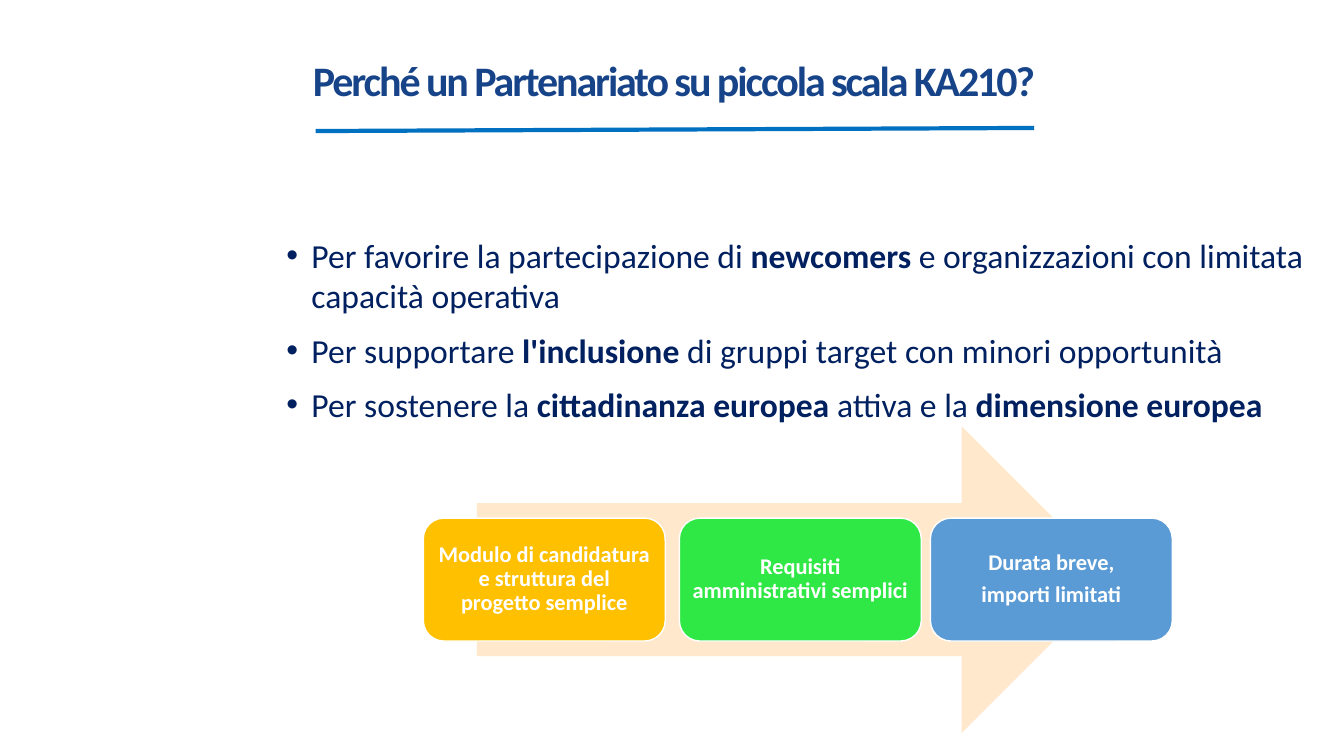
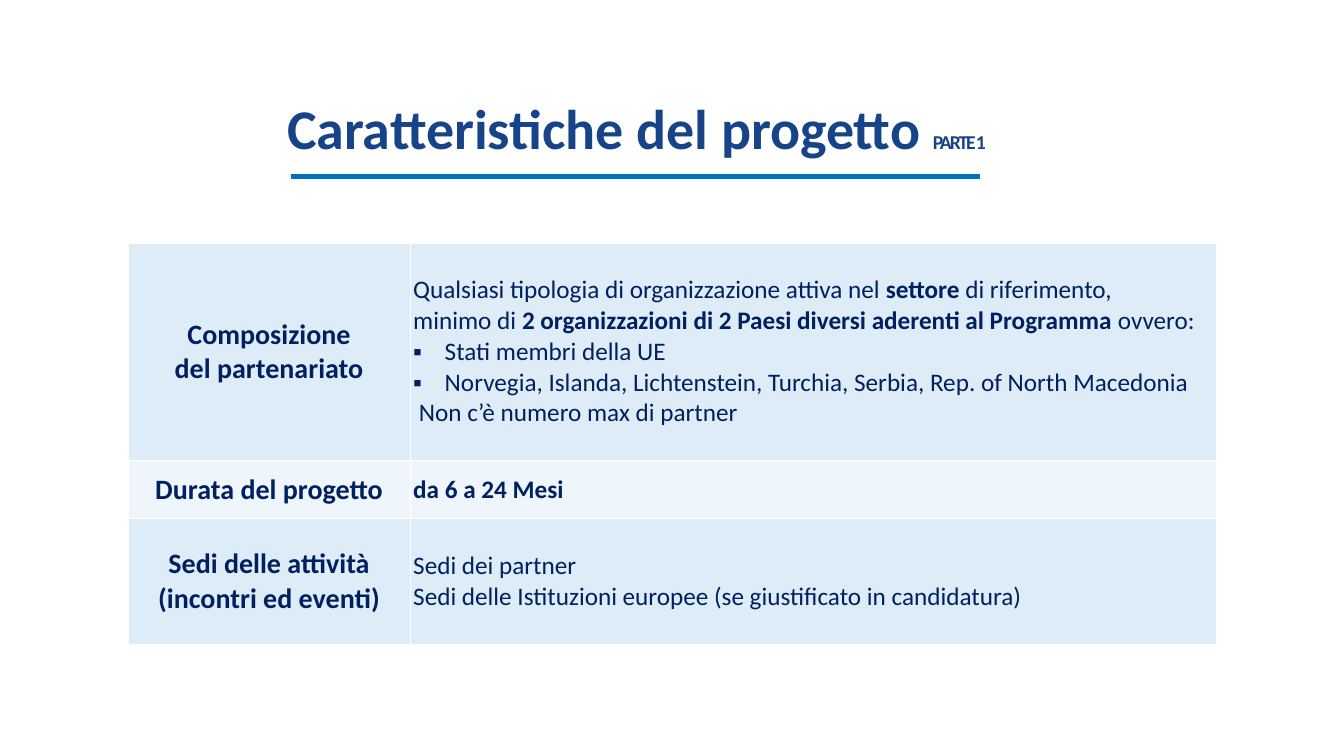
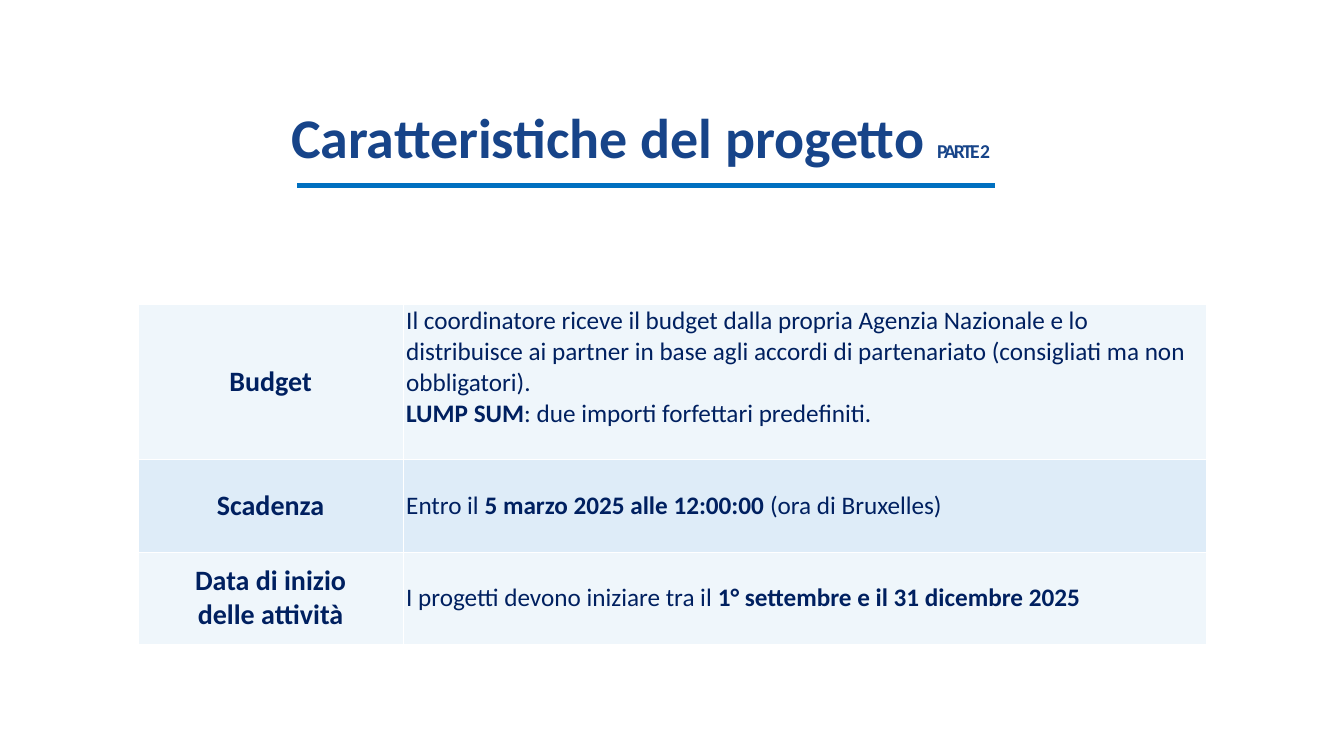
from dataclasses import dataclass

from lxml import etree
from pptx import Presentation
from pptx.dml.color import RGBColor
from pptx.enum.shapes import MSO_CONNECTOR, MSO_SHAPE
from pptx.enum.text import MSO_ANCHOR, MSO_AUTO_SIZE, PP_ALIGN
from pptx.oxml.ns import qn
from pptx.util import Pt

LINE = MSO_CONNECTOR.STRAIGHT
ARROW, ROUND = MSO_SHAPE.RIGHT_ARROW, MSO_SHAPE.ROUNDED_RECTANGLE
TOP, MIDDLE = MSO_ANCHOR.TOP, MSO_ANCHOR.MIDDLE
LEFT, CENTER = PP_ALIGN.LEFT, PP_ALIGN.CENTER


@dataclass(frozen=True)
class Theme:
    font: str = "Calibri"
    title: str = "174489"
    text: str = "002060"
    rule: str = "0070C0"
    white: str = "FFFFFF"
    arrow: str = "FFE8CC"
    dark: str = "DEECF8"
    pale: str = "EFF6FB"
    small: int = 14
    card: int = 16
    cell: int = 18
    label: int = 20
    body: int = 24
    head: int = 30
    big: int = 40


THEME = Theme()

# Text between ** marks is bold; a leading "▪ " makes a bullet in a table cell.
WHY = {
    "title": "Perché un Partenariato su piccola scala KA210?",
    "box": (146.9, 22.3, 668.9, 69.1),
    "rule": (225.4, 93.6, 738.7, 91.4),
    "points": [
        "Per favorire la partecipazione di **newcomers** e organizzazioni"
        " con limitata capacità operativa",
        "Per supportare **l'inclusione** di gruppi target con minori opportunità",
        "Per sostenere la **cittadinanza europea **attiva e la"
        " **dimensione europea**",
    ],
    "cards": [
        (302.4, "FFC000", ["Modulo di candidatura e struttura del progetto semplice"]),
        (485.3, "30E845", ["Requisiti amministrativi semplici"]),
        (664.6, "5B9BD5", ["Durata breve,", "importi limitati"]),
    ],
}

PARTS = [
    {
        "part": "PARTE 1",
        "box": (173.5, 56.2, 562.3, 69.1),
        "rule": (208.1, 126, 699.8, 126),
        "at": (91.4, 173.5),
        "cols": (201.6, 576),
        "fills": (THEME.dark, THEME.pale),
        "rows": [
            (155.5, MIDDLE, "Composizione\ndel partenariato", [
                "Qualsiasi tipologia di organizzazione attiva nel **settore**"
                " di riferimento,",
                "minimo di **2 organizzazioni di 2 Paesi diversi aderenti"
                " al Programma **ovvero:",
                "▪ Stati membri della UE",
                "▪ Norvegia, Islanda, Lichtenstein, Turchia, Serbia,"
                " Rep. of North Macedonia",
                " Non c’è numero max di partner",
            ]),
            (41.5, MIDDLE, "Durata del progetto", ["**da 6 a 24 Mesi**"]),
            (89.5, MIDDLE, "Sedi delle attività\n(incontri ed eventi)", [
                "Sedi dei partner",
                "Sedi delle Istituzioni europee (se giustificato in candidatura)",
            ]),
        ],
    },
    {
        "part": "PARTE 2",
        "box": (176.4, 62.6, 562.3, 69.1),
        "rule": (212.4, 132.5, 710.6, 132.5),
        "at": (98.6, 217.7),
        "cols": (189.4, 573.8),
        "fills": (THEME.pale, THEME.dark),
        "rows": [
            (110.5, TOP, "Budget", [
                "Il coordinatore riceve il budget dalla propria Agenzia Nazionale"
                " e lo distribuisce ai partner in base agli accordi di partenariato"
                " (consigliati ma non obbligatori).",
                "**LUMP SUM**: due importi forfettari predefiniti.",
            ]),
            (66, MIDDLE, "Scadenza",
             ["Entro il **5 marzo 2025 alle 12:00:00 **(ora di Bruxelles)"]),
            (66, MIDDLE, "Data di inizio\ndelle attività",
             ["I progetti devono iniziare tra il"
              " **1° settembre e il 31 dicembre 2025**"]),
        ],
    },
]


def rgb(code):
    return RGBColor.from_string(code)


def style(para, size, color, bold=None, align=LEFT):
    para.alignment = align
    font = para.font
    font.name, font.size, font.bold = THEME.font, Pt(size), bold
    font.color.rgb = rgb(color)


def write(para, text):
    """Add runs to a paragraph, bold between ** marks."""
    for i, piece in enumerate(text.split("**")):
        if piece:
            run = para.add_run()
            run.text = piece
            if i % 2:
                run.font.bold = True


def bullet(para, mark, hang):
    props = para._p.get_or_add_pPr()
    props.set("marL", str(Pt(hang)))
    props.set("indent", str(-Pt(hang)))
    etree.SubElement(props, qn("a:buFont")).set("typeface", "Arial")
    etree.SubElement(props, qn("a:buChar")).set("char", mark)


def paras(frame, texts):
    """Yield a paragraph of the frame for each text."""
    for i, text in enumerate(texts):
        yield (frame.add_paragraph() if i else frame.paragraphs[0]), text


def place(shape, box):
    shape.left, shape.top, shape.width, shape.height = map(Pt, box)


def add_head(slide, box, text, size, part=None):
    shape = slide.shapes.title
    place(shape, box)
    frame = shape.text_frame
    frame.auto_size = MSO_AUTO_SIZE.NONE
    frame.vertical_anchor = MIDDLE
    para = frame.paragraphs[0]
    style(para, size, THEME.title, True, CENTER)
    write(para, text)
    if part:
        write(para, part)
        para.runs[-1].font.size = Pt(THEME.small)
    para.runs[-1]._r.get_or_add_rPr().set("spc", "-150")


def add_rule(slide, ends):
    rule = slide.shapes.add_connector(LINE, *map(Pt, ends))
    rule.line.color.rgb = rgb(THEME.rule)
    rule.line.width = Pt(3)
    etree.SubElement(rule._element.spPr, qn("a:effectLst"))


def add_shape(slide, kind, box, fill):
    shape = slide.shapes.add_shape(kind, *map(Pt, box))
    shape.shadow.inherit = False
    shape.fill.solid()
    shape.fill.fore_color.rgb = rgb(fill)
    shape.line.fill.background()
    return shape


def add_card(slide, left, fill, texts):
    card = add_shape(slide, ROUND, (left, 370.1, 172.8, 87.8), fill)
    card.line.color.rgb = rgb(THEME.white)
    card.line.width = Pt(1)
    frame = card.text_frame
    frame.word_wrap, frame.vertical_anchor = True, MIDDLE
    frame.margin_left = frame.margin_right = Pt(5)
    frame.margin_top = frame.margin_bottom = Pt(5)
    for para, text in paras(frame, texts):
        para.line_spacing, para.space_after = 0.9, Pt(5.6)
        style(para, THEME.card, THEME.white, True, CENTER)
        write(para, text)


def add_points(slide, points):
    shape = slide.placeholders[1]
    place(shape, (197.3, 164.2, 743.8, 143.3))
    frame = shape.text_frame
    frame.auto_size = MSO_AUTO_SIZE.NONE
    for i, (para, text) in enumerate(paras(frame, points)):
        para.space_before = Pt(10 if i else 0)
        bullet(para, "•", 18)
        style(para, THEME.body, THEME.text)
        write(para, text)


def add_borders(cell):
    props = cell._tc.get_or_add_tcPr()
    for i, side in enumerate(("lnL", "lnR", "lnT", "lnB")):
        edge = etree.Element(qn("a:" + side), w=str(Pt(0.5)))
        fill = etree.SubElement(edge, qn("a:solidFill"))
        etree.SubElement(fill, qn("a:srgbClr")).set("val", THEME.white)
        props.insert(i, edge)


def format_cell(cell, fill, anchor):
    cell.fill.solid()
    cell.fill.fore_color.rgb = rgb(fill)
    cell.vertical_anchor = anchor
    cell.margin_left = cell.margin_right = Pt(2.2)
    cell.margin_top = cell.margin_bottom = Pt(0.7)
    add_borders(cell)


def fill_cell(cell, texts):
    for para, text in paras(cell.text_frame, texts):
        if text.startswith("▪ "):
            bullet(para, "▪", 22.5)
            text = text[2:]
        style(para, THEME.cell, THEME.text, False)
        write(para, text)


def add_grid(slide, at, cols, rows, fills):
    size = sum(cols), sum(row[0] for row in rows)
    grid = slide.shapes.add_table(len(rows), len(cols), *map(Pt, at + size)).table
    grid.first_row = grid.horz_banding = False
    for col, width in zip(grid.columns, cols):
        col.width = Pt(width)
    for i, (height, anchor, label, texts) in enumerate(rows):
        grid.rows[i].height = Pt(height)
        name, info = grid.cell(i, 0), grid.cell(i, 1)
        format_cell(name, fills[i % 2], MIDDLE)
        format_cell(info, fills[i % 2], anchor)
        para = name.text_frame.paragraphs[0]
        para.text = label
        style(para, THEME.label, THEME.text, True, CENTER)
        fill_cell(info, texts)


def main():
    deck = Presentation()
    deck.slide_width, deck.slide_height = Pt(960), Pt(540)

    slide = deck.slides.add_slide(deck.slide_layouts[1])
    add_head(slide, WHY["box"], WHY["title"], THEME.head)
    add_points(slide, WHY["points"])
    add_shape(slide, ARROW, (340.6, 304.6, 455.8, 218.9), THEME.arrow)
    for card in WHY["cards"]:
        add_card(slide, *card)
    add_rule(slide, WHY["rule"])

    for part in PARTS:
        slide = deck.slides.add_slide(deck.slide_layouts[5])
        add_head(slide, part["box"], "Caratteristiche del progetto ",
                 THEME.big, part["part"])
        add_grid(slide, part["at"], part["cols"], part["rows"], part["fills"])
        add_rule(slide, part["rule"])

    deck.save("out.pptx")


if __name__ == "__main__":
    main()
